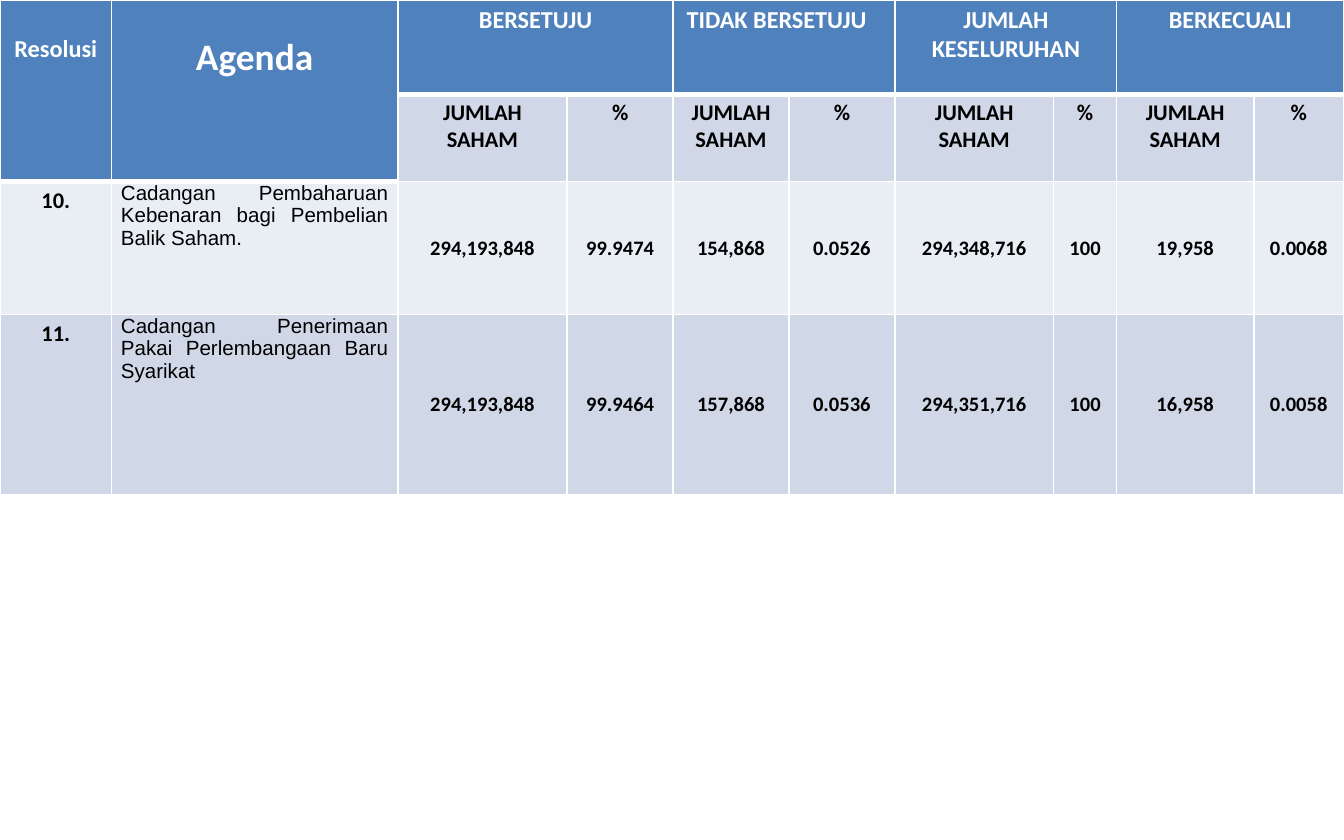
from lxml.etree import SubElement
from pptx import Presentation
from pptx.dml.color import RGBColor
from pptx.enum.text import MSO_ANCHOR, PP_ALIGN
from pptx.oxml.ns import qn
from pptx.util import Inches, Pt

COLORS = {
    "header": "4F81BD",
    "band_dark": "D0D8E8",
    "band_light": "E9EDF4",
    "white": "FFFFFF",
    "black": "000000",
}
COLUMN_WIDTHS = [0.83, 2.13, 1.26, 0.79, 0.86, 0.79, 1.18, 0.47, 1.02, 0.67]
ROW_HEIGHTS = [0.7, 0.65, 0.99, 1.34]
GROUPS = ["BERSETUJU", "TIDAK BERSETUJU", "JUMLAH KESELURUHAN", "BERKECUALI"]
RESOLUTIONS = [
    ("10.", "Cadangan Pembaharuan Kebenaran bagi Pembelian Balik Saham.",
     ["294,193,848", "99.9474", "154,868", "0.0526",
      "294,348,716", "100", "19,958", "0.0068"]),
    ("11.", "Cadangan Penerimaan Pakai Perlembangaan Baru Syarikat",
     ["294,193,848", "99.9464", "157,868", "0.0536",
      "294,351,716", "100", "16,958", "0.0058"]),
]


def edge_below(row, column):
    """Line width under a cell: thick below each header cell."""
    header_row = 1 if column < 2 else 0
    return 3 if row == header_row else 1


def style_cell(cell, row, column, fill):
    properties = cell._tc.get_or_add_tcPr()
    widths = {"a:lnL": 1, "a:lnR": 1,
              "a:lnT": edge_below(row - 1, column),
              "a:lnB": edge_below(row, column)}
    for tag, width in widths.items():
        line = SubElement(properties, qn(tag), w=str(Pt(width)))
        solid = SubElement(line, qn("a:solidFill"))
        SubElement(solid, qn("a:srgbClr"), val=COLORS["white"])
    cell.fill.solid()
    cell.fill.fore_color.rgb = RGBColor.from_string(COLORS[fill])


def write_cell(cell, text, size, color="black", font="Calibri", bold=True,
               align=PP_ALIGN.CENTER, anchor=MSO_ANCHOR.TOP,
               side=0.1, top=0.04, bottom=0.04):
    cell.margin_left = cell.margin_right = Inches(side)
    cell.margin_top, cell.margin_bottom = Inches(top), Inches(bottom)
    cell.vertical_anchor = anchor
    paragraph = cell.text_frame.paragraphs[0]
    paragraph.alignment = align
    run = paragraph.add_run()
    run.text = text
    run.font.size = Pt(size)
    run.font.name = font
    run.font.bold = bold
    run.font.color.rgb = RGBColor.from_string(COLORS[color])


def fill_headers(table):
    for column, (text, size) in enumerate([("Resolusi", 13), ("Agenda", 20)]):
        table.cell(0, column).merge(table.cell(1, column))
        write_cell(table.cell(0, column), text, size, "white", top=0.26)
    for index, group in enumerate(GROUPS):
        column = 2 + 2 * index
        table.cell(0, column).merge(table.cell(0, column + 1))
        align = PP_ALIGN.LEFT if group == "TIDAK BERSETUJU" else PP_ALIGN.CENTER
        write_cell(table.cell(0, column), group, 13, "white", align=align)
        write_cell(table.cell(1, column), "JUMLAH SAHAM", 12)
        write_cell(table.cell(1, column + 1), "%", 12)


def fill_resolutions(table):
    tight = {"side": 0.07, "top": 0, "bottom": 0}
    for row, (number, agenda, votes) in enumerate(RESOLUTIONS, start=2):
        write_cell(table.cell(row, 0), number, 12)
        write_cell(table.cell(row, 1), agenda, 11, font="Arial", bold=False,
                   align=PP_ALIGN.JUSTIFY, **tight)
        for column, value in enumerate(votes, start=2):
            write_cell(table.cell(row, column), value, 11,
                       anchor=MSO_ANCHOR.MIDDLE, **tight)


def add_voting_table(slide, left, top, width, height):
    table = slide.shapes.add_table(
        len(ROW_HEIGHTS), len(COLUMN_WIDTHS),
        Inches(left), Inches(top), Inches(width), Inches(height)).table
    for column, column_width in zip(table.columns, COLUMN_WIDTHS):
        column.width = Inches(column_width)
    for row, row_height in zip(table.rows, ROW_HEIGHTS):
        row.height = Inches(row_height)
    row_fills = ["header", "band_dark", "band_light", "band_dark"]
    for row, row_fill in enumerate(row_fills):
        for column in range(len(COLUMN_WIDTHS)):
            fill = "header" if row < 2 and column < 2 else row_fill
            style_cell(table.cell(row, column), row, column, fill)
    fill_headers(table)
    fill_resolutions(table)


def main():
    presentation = Presentation()
    presentation.slide_width = Inches(10)
    presentation.slide_height = Inches(6.25)
    slide = presentation.slides.add_slide(presentation.slide_layouts[6])
    add_voting_table(slide, 0, 0, sum(COLUMN_WIDTHS), sum(ROW_HEIGHTS))
    presentation.save("out.pptx")


if __name__ == "__main__":
    main()
